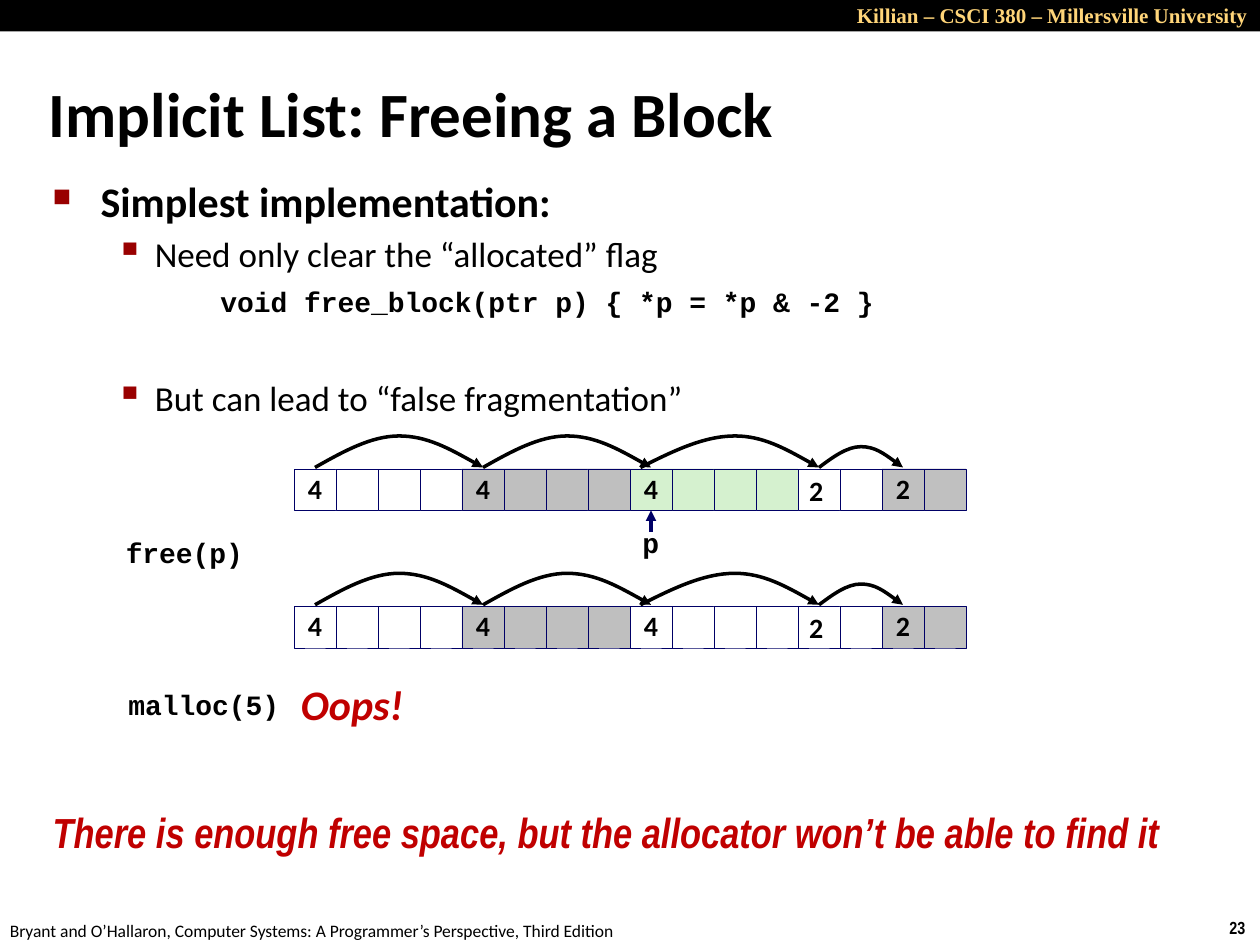
from lxml.etree import SubElement
from pptx import Presentation
from pptx.dml.color import RGBColor
from pptx.enum.shapes import MSO_CONNECTOR as CONN, MSO_SHAPE as SHAPE
from pptx.enum.text import MSO_ANCHOR as ANCHOR, PP_ALIGN as ALIGN
from pptx.oxml.ns import qn
from pptx.util import Inches, Pt

COLS, ROWS = 100, 75
UNIT = Inches(0.1)
CELL = 10 / 3
LIST_LEFT = 7 * CELL
COLORS = {
    "black": "000000", "white": "FFFFFF", "gold": "FFD579", "bullet": "990000",
    "navy": "000066", "red": "C00000", "gray": "BFBFBF", "silver": "C0C0C0",
    "green": "D5F1CF",
}
ARCS = [(0.5, 2.5, 4.5, 2.5), (4.5, 6.5, 8.5, 2.5),
        (8.25, 10.5, 12.5, 2.5), (12.5, 13.5, 14.5, 1.65)]


def grid(*values):
    return [round(v * UNIT) for v in values]


def rgb(name):
    return RGBColor.from_string(COLORS[name])


def write(p, text, size=16, font="Calibri", color="black", bold=True,
          italic=False, align=ALIGN.LEFT, spacing=None, before=0):
    p.alignment = align
    p.line_spacing = spacing
    p.space_before = Pt(before)
    r = p.add_run()
    r.text = text
    f = r.font
    f.size, f.name, f.bold, f.italic = Pt(size), font, bold, italic
    f.color.rgb = rgb(color)


def indent(p, left, hanging=0, bullet=None, percent=100):
    pPr = p._p.get_or_add_pPr()
    pPr.set("marL", str(Inches(left)))
    pPr.set("indent", str(-Inches(hanging)))
    if bullet:
        clr = SubElement(pPr, qn("a:buClr"))
        SubElement(clr, qn("a:srgbClr"), val=COLORS["bullet"])
        SubElement(pPr, qn("a:buSzPct"), val=str(percent * 1000))
        SubElement(pPr, qn("a:buChar"), char=bullet)


def add_text(s, x, y, w, h, text, wrap=False, anchor=ANCHOR.TOP, **fmt):
    tf = s.shapes.add_textbox(*grid(x, y, w, h)).text_frame
    tf.word_wrap = wrap
    tf.vertical_anchor = anchor
    write(tf.paragraphs[0], text, **fmt)


def add_box(s, x, y, w, h, fill, line=None, label=None):
    sp = s.shapes.add_shape(SHAPE.RECTANGLE, *grid(x, y, w, h))
    sp.shadow.inherit = False
    sp.fill.solid()
    sp.fill.fore_color.rgb = rgb(fill)
    if line:
        sp.line.color.rgb = rgb(line)
        sp.line.width = Pt(0.25)
    else:
        sp.line.fill.background()
    if label:
        tf = sp.text_frame
        tf.word_wrap = False
        tf.vertical_anchor = ANCHOR.MIDDLE
        write(tf.paragraphs[0], label, align=ALIGN.CENTER, spacing=0.98)


def style_arrow(sp, color):
    sp.line.color.rgb = rgb(color)
    sp.line.width = Pt(2)
    SubElement(sp.line._get_or_add_ln(), qn("a:tailEnd"), type="triangle")


def add_arc(s, start, peak, end, base, height):
    top, mid = base - height, base - height / 2
    rise, fall = (peak - start) / 3, (end - peak) / 3
    points = [(start + rise, mid), (start + 2 * rise, top), (peak, top),
              (peak + fall, top), (peak + 2 * fall, mid), (end, base)]
    builder = s.shapes.build_freeform(*grid(start, base))
    builder.add_line_segments([grid(*pt) for pt in points], close=False)
    sp = builder.convert_to_shape()
    sp.shadow.inherit = False
    sp.fill.background()
    style_arrow(sp, "black")
    outline = next(sp._element.iter(qn("a:path")))
    segments = outline.findall(qn("a:lnTo"))
    for i in range(0, len(segments), 3):
        curve = SubElement(outline, qn("a:cubicBezTo"))
        for segment in segments[i:i + 3]:
            curve.append(segment[0])
            outline.remove(segment)


def add_heap(s, top, third_fill):
    blocks = [(4, "white"), (4, "gray"), (4, third_fill), (2, "white"), (2, "silver")]
    col = 0
    for n, (size, fill) in enumerate(blocks):
        for i in range(size):
            label = str(size) if i == 0 and n != 3 else None
            add_box(s, LIST_LEFT + (col + i) * CELL, top, CELL, CELL,
                    fill, "navy", label)
        if n == 3:
            add_text(s, LIST_LEFT + col * CELL - 0.1, top, 3.1, 3.7,
                     str(size), spacing=0.98)
        col += size
    for start, peak, end, height in ARCS:
        xs = [LIST_LEFT + c * CELL for c in (start, peak, end)]
        add_arc(s, *xs, top - 0.1, height)


def add_pointer(s, col, tail_y, head_y):
    x = LIST_LEFT + col * CELL
    line = s.shapes.add_connector(CONN.STRAIGHT, *grid(x, tail_y, x, head_y))
    style_arrow(line, "navy")
    SubElement(line._element.spPr, qn("a:effectLst"))


def add_body(s):
    tf = s.shapes.add_textbox(*grid(3.2, 13.4, 90.9, 47.5)).text_frame
    tf.word_wrap = True
    sub = dict(left=0.81, hanging=0.31, bullet="▪", percent=110)
    items = [
        ("Simplest implementation:", dict(size=24, before=4.8),
         dict(left=0.38, hanging=0.38, bullet="■", percent=60)),
        ("Need only clear the “allocated” flag",
         dict(size=20, bold=False, before=4), sub),
        ("void free_block(ptr p) { *p = *p & -2 }",
         dict(font="Courier New", spacing=1.01, before=5.4), dict(left=1.33)),
        ("But can lead to “false fragmentation”",
         dict(size=20, bold=False, before=33.6), sub),
    ]
    for i, (text, fmt, layout) in enumerate(items):
        p = tf.add_paragraph() if i else tf.paragraphs[0]
        write(p, text, **fmt)
        indent(p, **layout)


def add_frame(s):
    add_box(s, 0, 0, COLS, 2.5, "black")
    add_text(s, 60.8, -0.3, 39.2, 3, "Killian – CSCI 380 – Millersville University",
             wrap=True, size=12, font="Times New Roman", color="gold", align=ALIGN.RIGHT)
    add_text(s, 96.6, 72.3, 3.4, 2.7, "23", size=10, font="Arial Narrow")
    add_text(s, -0.2, 72.5, 50.8, 2.7,
             "Bryant and O’Hallaron, Computer Systems: A Programmer’s Perspective, Third Edition",
             size=10, bold=False)


def main():
    prs = Presentation()
    prs.slide_width, prs.slide_height = grid(COLS, ROWS)
    s = prs.slides.add_slide(prs.slide_layouts[6])
    code = dict(font="Courier New", spacing=0.94)
    alert = dict(size=24, color="red", italic=True)
    add_frame(s)
    add_text(s, 2.9, 5.8, 78.8, 6.3, "Implicit List: Freeing a Block",
             wrap=True, anchor=ANCHOR.MIDDLE, size=36)
    add_body(s)
    add_heap(s, 37.2, "green")
    add_text(s, 9, 42.2, 11.4, 3.6, "free(p)", **code)
    add_text(s, 50, 41.4, 3.3, 3.6, "p", **code)
    add_pointer(s, 8.5, 42.2, 40.5)
    add_heap(s, 48.1, "white")
    add_text(s, 9.2, 54.3, 14.1, 3.6, "malloc(5)", **code)
    add_text(s, 22.9, 53.3, 10.3, 5, "Oops!", spacing=1.02, **alert)
    add_text(s, 3.2, 63.5, 91.3, 8.1,
             "There is enough free space, but the allocator won’t be able to find it",
             wrap=True, font="Arial Narrow", **alert)
    prs.save("out.pptx")


if __name__ == "__main__":
    main()
